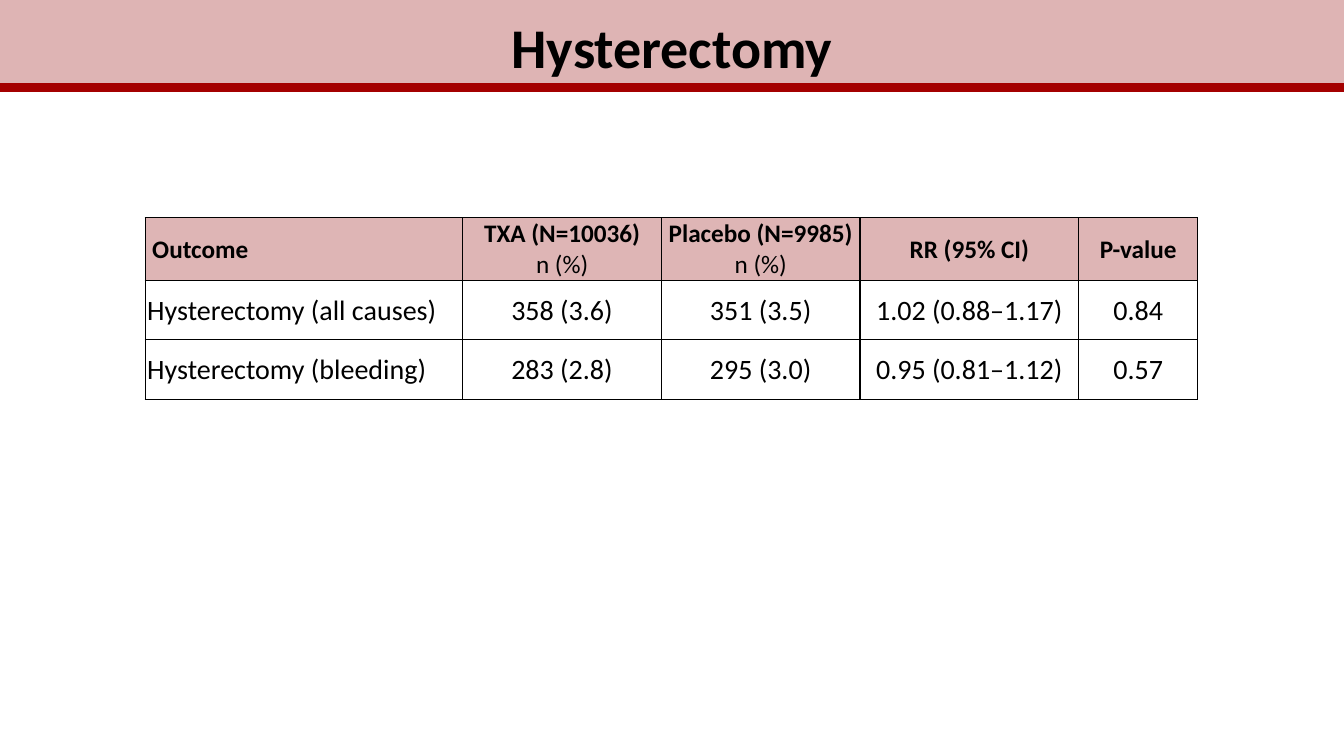
from dataclasses import dataclass

import pptx
import pptx.dml.color
import pptx.enum.shapes
import pptx.enum.text
import pptx.oxml
import pptx.oxml.ns
import pptx.util
from pptx.util import Inches

ALIGN = pptx.enum.text.PP_ALIGN
MIDDLE = pptx.enum.text.MSO_ANCHOR.MIDDLE


@dataclass(frozen=True)
class Theme:
    font: str = "Calibri"
    text: str = "000000"
    banner: str = "DEB4B4"
    rule: str = "A40000"
    header: str = "DEB5B5"
    body: str = "FFFFFF"
    title_size: int = 40
    header_size: int = 18
    body_size: int = 20
    rule_width: int = 6
    border_width: int = 1


def color(value):
    return pptx.dml.color.RGBColor.from_string(value)


class SlideBuilder:
    def __init__(self, presentation, theme):
        self.theme = theme
        self.slide = presentation.slides.add_slide(presentation.slide_layouts[5])

    def fill(self, target, value):
        target.fill.solid()
        target.fill.fore_color.rgb = color(value)

    def format_paragraph(self, paragraph, size, bold, alignment):
        paragraph.alignment = alignment
        for run in paragraph.runs:
            run.font.name = self.theme.font
            run.font.size = pptx.util.Pt(size)
            run.font.bold = bold
            run.font.color.rgb = color(self.theme.text)

    def title(self, text, left, top, width, height):
        title = self.slide.shapes.title
        title.left, title.top = Inches(left), Inches(top)
        title.width, title.height = Inches(width), Inches(height)
        self.fill(title, self.theme.banner)
        text_frame = title.text_frame
        text_frame.text = text
        text_frame.auto_size = pptx.enum.text.MSO_AUTO_SIZE.NONE
        text_frame.vertical_anchor = MIDDLE
        self.format_paragraph(text_frame.paragraphs[0], self.theme.title_size, True, ALIGN.CENTER)

    def horizontal_rule(self, left, right, top):
        rule = self.slide.shapes.add_connector(
            pptx.enum.shapes.MSO_CONNECTOR.STRAIGHT,
            Inches(left), Inches(top), Inches(right), Inches(top))
        rule.line.color.rgb = color(self.theme.rule)
        rule.line.width = pptx.util.Pt(self.theme.rule_width)
        rule._element.spPr.append(pptx.oxml.parse_xml(
            f'<a:effectLst {pptx.oxml.ns.nsdecls("a")}/>'))

    def add_borders(self, cell):
        properties = cell._tc.get_or_add_tcPr()
        width = pptx.util.Pt(self.theme.border_width)
        for position, side in enumerate("LRTB"):
            properties.insert(position, pptx.oxml.parse_xml(
                f'<a:ln{side} {pptx.oxml.ns.nsdecls("a")} w="{width}"><a:solidFill>'
                f'<a:srgbClr val="{self.theme.text}"/></a:solidFill></a:ln{side}>'))

    def table(self, rows, left, top, column_widths, row_heights):
        """Draw a table with a header row; later lines of a header cell are not bold."""
        table = self.slide.shapes.add_table(
            len(rows), len(column_widths), Inches(left), Inches(top),
            Inches(sum(column_widths)), Inches(sum(row_heights))).table
        table.first_row = table.horz_banding = False
        for column, width in zip(table.columns, column_widths):
            column.width = Inches(width)
        for row, height in zip(table.rows, row_heights):
            row.height = Inches(height)
        for row_index, texts in enumerate(rows):
            for column_index, text in enumerate(texts):
                self.cell(table.cell(row_index, column_index), text,
                          row_index == 0, column_index == 0)

    def cell(self, cell, text, is_header, is_label):
        theme = self.theme
        self.fill(cell, theme.header if is_header else theme.body)
        self.add_borders(cell)
        cell.vertical_anchor = MIDDLE
        cell.margin_left = cell.margin_right = cell.margin_top = Inches(0.01)
        cell.margin_bottom = 0
        if is_label:
            cell.margin_left = Inches(0.07 if is_header else 0.02)
        cell.text_frame.text = text
        for index, paragraph in enumerate(cell.text_frame.paragraphs):
            self.format_paragraph(
                paragraph, theme.header_size if is_header else theme.body_size,
                is_header and index == 0, ALIGN.LEFT if is_label else ALIGN.CENTER)


def main():
    presentation = pptx.Presentation()
    presentation.slide_width, presentation.slide_height = Inches(13.33), Inches(7.5)
    builder = SlideBuilder(presentation, Theme())
    builder.title("Hysterectomy", 0, 0, 13.33, 0.91)
    builder.horizontal_rule(0, 13.33, 0.87)
    builder.table(
        [
            ["Outcome", "TXA (N=10036)\nn (%)", "Placebo (N=9985)\nn (%)", "RR (95% CI)", "P-value"],
            ["Hysterectomy (all causes)", "358 (3.6)", "351 (3.5)", "1.02 (0.88–1.17)", "0.84"],
            ["Hysterectomy (bleeding)", "283 (2.8)", "295 (3.0)", "0.95 (0.81–1.12)", "0.57"],
        ],
        1.44, 2.16, [3.15, 1.97, 1.97, 2.17, 1.18], [0.62, 0.59, 0.59])
    presentation.save("out.pptx")


if __name__ == "__main__":
    main()
